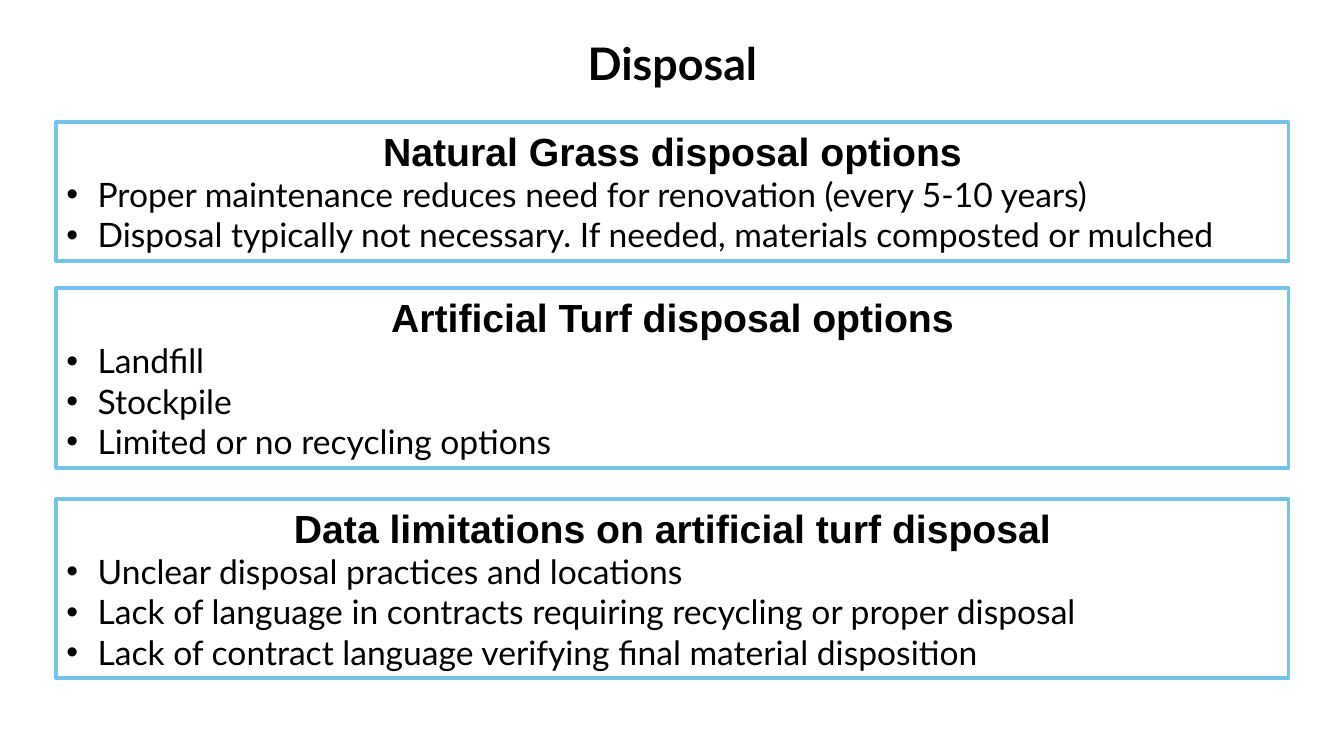
import pptx
import pptx.dml.color
import pptx.enum.shapes
import pptx.enum.text
import pptx.util
from lxml import etree

BLACK = pptx.dml.color.RGBColor(0x00, 0x00, 0x00)
SKY_BLUE = pptx.dml.color.RGBColor(0x74, 0xC4, 0xE9)

SLIDE_WIDTH = pptx.util.Inches(13.33)
SLIDE_HEIGHT = pptx.util.Inches(7.5)
BULLET_INDENT = pptx.util.Inches(0.31)

# Horizontal shares of the slide width
PANEL_LEFT, PANEL_WIDTH = 0.042, 0.9167
TITLE_LEFT, TITLE_WIDTH = 0.2228, 0.5551

# Top and height as shares of the slide height, heading, bullets
PANELS = [
    (0.1613, 0.184, "Natural Grass disposal options", [
        "Proper maintenance reduces need for renovation (every 5-10 years)",
        "Disposal typically not necessary. If needed, materials composted or mulched",
    ]),
    (0.3813, 0.2373, "Artificial Turf disposal options", [
        "Landfill",
        "Stockpile",
        "Limited or no recycling options",
    ]),
    (0.66, 0.2373, "Data limitations on artificial turf disposal", [
        "Unclear disposal practices and locations",
        "Lack of language in contracts requiring recycling or proper disposal",
        "Lack of contract language verifying final material disposition",
    ]),
]


def place(left, top, width, height):
    """Turn shares of the slide into lengths."""
    return (int(left * SLIDE_WIDTH), int(top * SLIDE_HEIGHT),
            int(width * SLIDE_WIDTH), int(height * SLIDE_HEIGHT))


def write(paragraph, text, font_name, size, bold, alignment):
    paragraph.text = text
    paragraph.alignment = alignment
    font = paragraph.runs[0].font
    font.name = font_name
    font.size = pptx.util.Pt(size)
    font.bold = bold
    font.color.rgb = BLACK


def add_bullet(paragraph):
    properties = paragraph._p.get_or_add_pPr()
    properties.set("marL", str(BULLET_INDENT))
    properties.set("indent", str(-BULLET_INDENT))
    namespace = properties.nsmap["a"]
    etree.SubElement(properties, f"{{{namespace}}}buFont", typeface="Arial")
    etree.SubElement(properties, f"{{{namespace}}}buChar", char="•")


def set_title(slide, text):
    title = slide.shapes.title
    title.left, title.top, title.width, title.height = place(
        TITLE_LEFT, 0.04, TITLE_WIDTH, 0.0853)
    title.text_frame.vertical_anchor = pptx.enum.text.MSO_ANCHOR.MIDDLE
    write(title.text_frame.paragraphs[0], text, "Lato", 32, True,
          pptx.enum.text.PP_ALIGN.CENTER)


def add_panel(slide, top, height, heading, bullets):
    panel = slide.shapes.add_shape(
        pptx.enum.shapes.MSO_SHAPE.RECTANGLE,
        *place(PANEL_LEFT, top, PANEL_WIDTH, height))
    panel.shadow.inherit = False
    panel.fill.background()
    panel.line.color.rgb = SKY_BLUE
    panel.line.width = pptx.util.Pt(2.75)

    text_frame = panel.text_frame
    text_frame.word_wrap = True
    text_frame.vertical_anchor = pptx.enum.text.MSO_ANCHOR.TOP
    write(text_frame.paragraphs[0], heading, "Arial", 28, True,
          pptx.enum.text.PP_ALIGN.CENTER)
    for bullet in bullets:
        paragraph = text_frame.add_paragraph()
        write(paragraph, bullet, "Lato", 24, False, pptx.enum.text.PP_ALIGN.LEFT)
        add_bullet(paragraph)


def main():
    presentation = pptx.Presentation()
    presentation.slide_width = SLIDE_WIDTH
    presentation.slide_height = SLIDE_HEIGHT
    title_only = presentation.slide_layouts.get_by_name("Title Only")
    slide = presentation.slides.add_slide(title_only)

    # Title
    set_title(slide, "Disposal")

    # Outlined panels, top to bottom
    for panel in PANELS:
        add_panel(slide, *panel)

    presentation.save("out.pptx")


if __name__ == "__main__":
    main()
